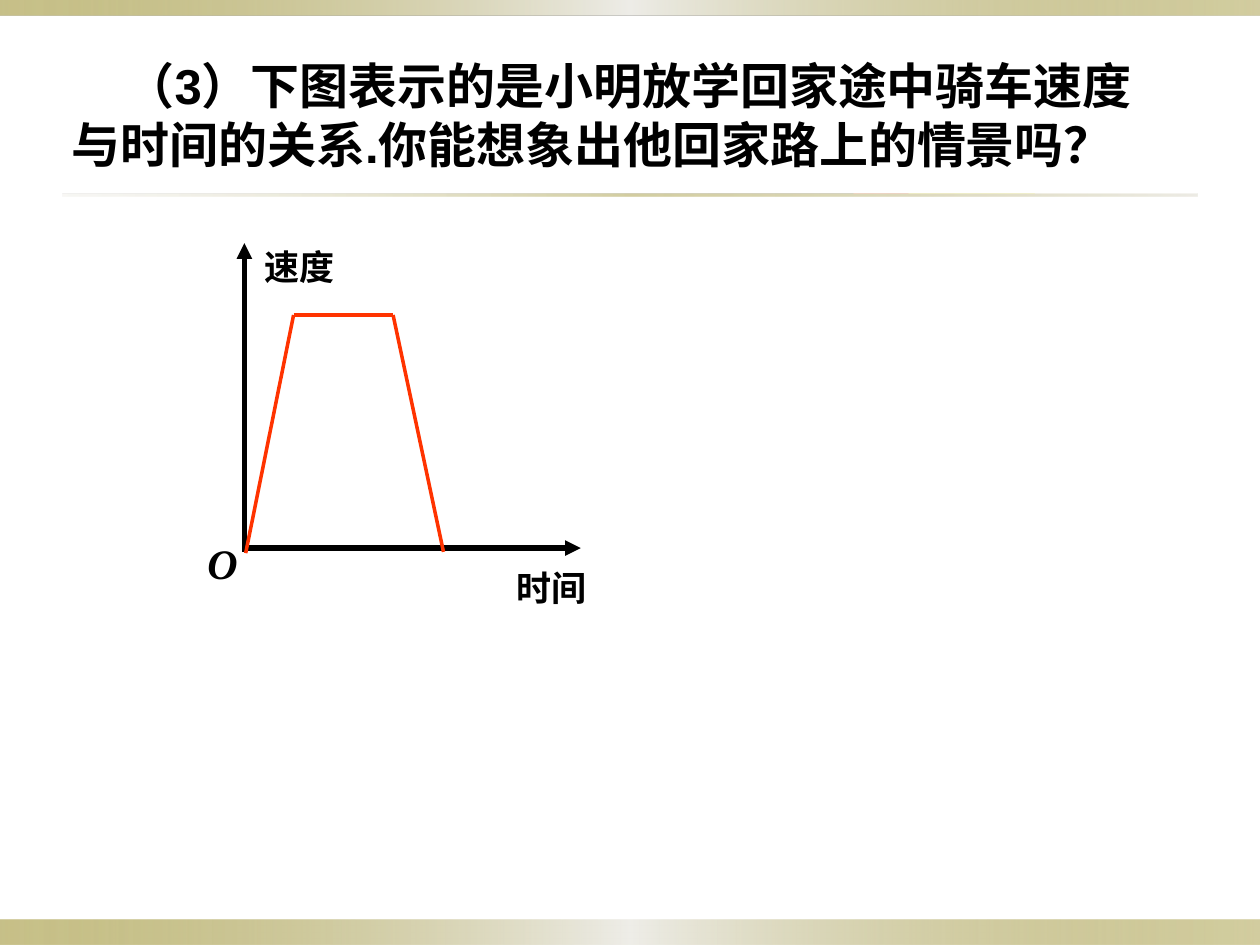
from dataclasses import dataclass
from itertools import pairwise

from lxml.etree import SubElement
from pptx import Presentation
from pptx.dml.color import RGBColor
from pptx.enum.lang import MSO_LANGUAGE_ID as LANG
from pptx.enum.shapes import MSO_CONNECTOR as CONNECTOR, MSO_SHAPE as SHAPE
from pptx.enum.text import MSO_ANCHOR as ANCHOR, PP_ALIGN as ALIGN
from pptx.oxml.ns import qn
from pptx.util import Inches, Pt


@dataclass(frozen=True)
class Theme:
    ink: str = "000000"
    curve: str = "FF3300"
    paper: str = "FFFFFF"
    # Gradient stops: position %, colour, opacity %
    band: tuple = ((0, "918415", 50), (50, "EEEDE8", 100), (100, "918415", 40))
    rule: tuple = ((0, "DCD9CC", 20), (50, "918415", 40), (100, "DCD9CC", 50))
    latin: str = "Arial"
    chinese: str = "Noto Sans CJK SC"
    serif: str = "Times New Roman"
    question_size: int = 28
    origin_size: int = 24
    label_size: int = 20
    leading: float = 1.2
    axis_width: int = 3
    curve_width: int = 2


THEME = Theme()


def add_band(slide, box, stops):
    """Borderless strip with a left-to-right gradient."""
    band = slide.shapes.add_shape(SHAPE.RECTANGLE, *map(Inches, box))
    band.shadow.inherit = False
    band.line.fill.background()
    band.fill.gradient()
    band.fill.gradient_angle = 0
    stop_list = band.fill._fill._gradFill.find(qn("a:gsLst"))
    for stop in list(stop_list):
        stop_list.remove(stop)
    for position, colour, opacity in stops:
        stop = SubElement(stop_list, qn("a:gs"), pos=str(position * 1000))
        tint = SubElement(stop, qn("a:srgbClr"), val=colour)
        SubElement(tint, qn("a:alpha"), val=str(opacity * 1000))


def add_text(slide, box, text, size, latin, align=ALIGN.CENTER,
             indent=0, wrap=True, italic=False):
    """Bold text with fixed leading and a matching Chinese font."""
    frame = slide.shapes.add_textbox(*map(Inches, box)).text_frame
    frame.word_wrap = wrap
    frame.vertical_anchor = ANCHOR.TOP
    paragraph = frame.paragraphs[0]
    paragraph.alignment = align
    paragraph.line_spacing = Pt(size * THEME.leading)
    if indent:
        paragraph._p.get_or_add_pPr().set("indent", str(Inches(indent)))
    run = paragraph.add_run()
    run.text = text
    formats = {"name": latin, "size": Pt(size), "bold": True,
               "italic": italic, "language_id": LANG.SIMPLIFIED_CHINESE}
    for attribute, value in formats.items():
        setattr(run.font, attribute, value)
    run.font.color.rgb = RGBColor.from_string(THEME.ink)
    run.font._element.find(qn("a:latin")).addnext(
        run.font._element.makeelement(qn("a:ea"), typeface=THEME.chinese))


def add_line(slide, start, end, colour, width, arrow=False):
    """Straight line, with an optional arrowhead at its end."""
    segment = slide.shapes.add_connector(
        CONNECTOR.STRAIGHT, *map(Inches, (*start, *end)))
    segment.line.color.rgb = RGBColor.from_string(colour)
    segment.line.width = Pt(width)
    if arrow:
        SubElement(segment.line._get_or_add_ln(), qn("a:tailEnd"),
                   type="triangle")
    SubElement(segment._element.spPr, qn("a:effectLst"))


def add_speed_graph(slide):
    # Axes
    for start, end in (((1.95, 4.35), (4.61, 4.35)),
                       ((1.94, 4.38), (1.94, 1.93))):
        add_line(slide, start, end, THEME.ink, THEME.axis_width, arrow=True)

    # Origin and axis names
    add_text(slide, (1.54, 4.22, 0.45, 0.5), "O", THEME.origin_size,
             THEME.serif, wrap=False, italic=True)
    for name, box in (("时间", (3.91, 4.45, 0.93, 0.44)),
                      ("速度", (1.95, 1.9, 0.86, 0.44))):
        add_text(slide, box, name, THEME.label_size, THEME.chinese)

    # Speeding up, steady riding, slowing down
    ride = ((1.95, 4.39), (2.33, 2.5), (3.12, 2.5), (3.52, 4.38))
    for start, end in pairwise(ride):
        add_line(slide, start, end, THEME.curve, THEME.curve_width)


def main():
    deck = Presentation()
    deck.slide_width, deck.slide_height = Inches(10), Inches(7.5)
    slide = deck.slides.add_slide(deck.slide_layouts[6])
    slide.background.fill.solid()
    slide.background.fill.fore_color.rgb = RGBColor.from_string(THEME.paper)

    # Bottom and top bands, rule under the question
    add_band(slide, (0, 7.3, 10, 0.2), THEME.band)
    add_band(slide, (0, 0, 10, 0.12), THEME.band)
    add_band(slide, (0.5, 1.54, 9, 0.02), THEME.rule)

    # Question
    add_text(slide, (0.47, 0.39, 8.98, 1.04),
             "（3）下图表示的是小明放学回家途中骑车速度与时间的关系."
             "你能想象出他回家路上的情景吗？",
             THEME.question_size, THEME.latin, ALIGN.LEFT, indent=0.43)

    add_speed_graph(slide)
    deck.save("out.pptx")


if __name__ == "__main__":
    main()
